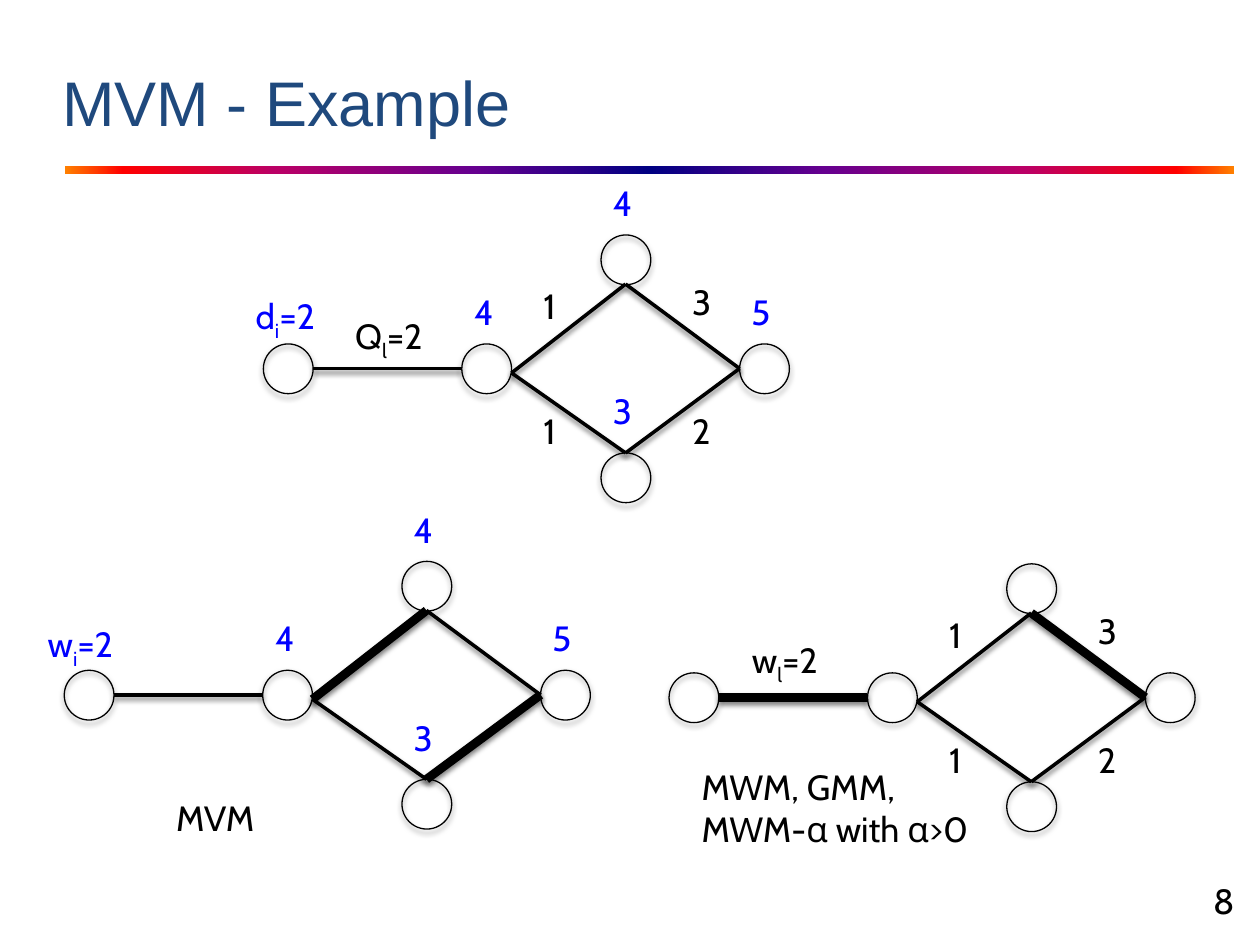
"""Build the MVM example slide: one weighted graph and its two matchings."""
from dataclasses import dataclass, field

import lxml.etree
import pptx
import pptx.dml.color
import pptx.enum.shapes
import pptx.enum.text
import pptx.oxml.ns
import pptx.util

RGBColor = pptx.dml.color.RGBColor
BLACK = RGBColor(0x00, 0x00, 0x00)
BLUE = RGBColor(0x00, 0x00, 0xFF)
NAVY = RGBColor(0x1F, 0x49, 0x7D)
WHITE = RGBColor(0xFF, 0xFF, 0xFF)
HALF_RAINBOW = [
    (0, RGBColor(0xFF, 0x82, 0x00)),
    (5, RGBColor(0xFF, 0x00, 0x00)),
    (18, RGBColor(0xBA, 0x00, 0x66)),
    (35, RGBColor(0x66, 0x00, 0x8F)),
]
RAINBOW = (HALF_RAINBOW + [(50, RGBColor(0x00, 0x00, 0x82))]
           + [(100 - stop, color) for stop, color in reversed(HALF_RAINBOW)])

COLUMNS, ROWS = 100, 75
WIDTH, HEIGHT = pptx.util.Inches(10), pptx.util.Inches(7.5)
NODE = 3.95
THIN, THICK = 2, 5
LABEL_WIDTH, LABEL_HEIGHT = 3.1, 4.4

NODES = {"leaf": (0, 0), "hub": (15.75, 0), "top": (26.8, -8.65),
         "bottom": (26.8, 8.65), "right": (37.8, 0)}
PORTS = {"leaf": (NODE, 1.95), "hub": (15.75, 1.95), "fork": (19.7, 2.3),
         "top": (28.75, -4.75), "bottom": (28.75, 8.65), "right": (37.8, 1.95)}
EDGES = [("leaf", "hub"), ("fork", "top"), ("fork", "bottom"),
         ("bottom", "right"), ("top", "right")]


@dataclass
class Label:
    """A text placed relative to its graph's leaf node."""
    text: str
    col: float
    row: float
    color: RGBColor = BLACK
    width: float = LABEL_WIDTH


@dataclass
class Graph:
    """A drawing of the example graph with its matched edges and labels."""
    col: float
    row: float
    labels: list[Label]
    matched: set[tuple[str, str]] = field(default_factory=set)


EDGE_WEIGHTS = [Label("3", 33.05, -5.5), Label("2", 33.05, 4.7),
                Label("1", 21.25, 4.7), Label("1", 21.25, -5.2)]
NODE_WEIGHTS = [Label("4", 26.75, -13.35, BLUE), Label("5", 37.75, -4.75, BLUE),
                Label("3", 26.75, 3.15, BLUE), Label("4", 15.75, -4.75, BLUE)]

GRAPHS = [
    Graph(20.9, 27.3, EDGE_WEIGHTS + NODE_WEIGHTS + [
        Label("Q_l=2", 6.3, -2.8, BLACK, 8.7),
        Label("d_i=2", -1.6, -4.4, BLUE, 12.6)]),
    Graph(5.1, 53.2, NODE_WEIGHTS + [Label("w_i=2", -2.3, -4.3, BLUE, 8.7)],
          {("fork", "top"), ("bottom", "right")}),
    Graph(53.1, 53.4, EDGE_WEIGHTS + [Label("w_l=2", 5.6, -3.2, BLACK, 8.7)],
          {("leaf", "hub"), ("top", "right")}),
]


def x(cols: float) -> int:
    """Convert grid columns to a length."""
    return round(WIDTH * cols / COLUMNS)


def y(rows: float) -> int:
    """Convert grid rows to a length."""
    return round(HEIGHT * rows / ROWS)


def add_text(slide, text: str, col: float, row: float, width: float, height: float, *,
             size: float = 20, font: str = "Cabin", color: RGBColor = BLACK,
             wrap: bool = True, grow: bool = True,
             inset: tuple[float, float] = (1, 0.5)) -> None:
    """Add a text box; the letter after an underscore becomes a subscript."""
    tf = slide.shapes.add_textbox(x(col), y(row), x(width), y(height)).text_frame
    tf.word_wrap = wrap
    auto = pptx.enum.text.MSO_AUTO_SIZE
    tf.auto_size = auto.SHAPE_TO_FIT_TEXT if grow else auto.NONE
    tf.margin_left, tf.margin_top = x(inset[0]), y(inset[1])
    p = tf.paragraphs[0]
    head, _, tail = text.partition("_")
    for part, baseline in ((head, 0), (tail[:1], -25000), (tail[1:], 0)):
        if not part:
            continue
        r = p.add_run()
        r.text = part
        r.font.size = pptx.util.Pt(size)
        r.font.name = font
        r.font.color.rgb = color
        if baseline:
            r._r.get_or_add_rPr().set("baseline", str(baseline))


def add_child(parent, tag: str, **attributes: str):
    """Append a DrawingML element and return it."""
    return lxml.etree.SubElement(parent, pptx.oxml.ns.qn(tag), **attributes)


def add_color(parent, color: RGBColor):
    """Append a colour element and return it."""
    return add_child(parent, "a:srgbClr", val=str(color))


def style_outline(s, width: float) -> None:
    """Give a shape or connector a black line and a soft shadow below."""
    s.line.color.rgb = BLACK
    s.line.width = pptx.util.Pt(width)
    effects = add_child(s._element.spPr, "a:effectLst")
    shadow = add_child(effects, "a:outerShdw", blurRad=str(pptx.util.Pt(3)),
                       dist=str(pptx.util.Pt(2)), dir="5400000", rotWithShape="0")
    add_child(add_color(shadow, BLACK), "a:alpha", val="50000")


def add_rainbow_bar(slide) -> None:
    """Add the gradient rule under the title."""
    s = slide.shapes.add_shape(pptx.enum.shapes.MSO_SHAPE.RECTANGLE,
                               x(5.1), y(13.1), x(92.9), y(0.8))
    s.shadow.inherit = False
    s.fill.gradient()
    s.fill.gradient_angle = 0
    stops = s._element.spPr.find(".//" + pptx.oxml.ns.qn("a:gsLst"))
    for old in list(stops):
        stops.remove(old)
    for stop, color in RAINBOW:
        add_color(add_child(stops, "a:gs", pos=str(stop * 1000)), color)
    s.line.color.rgb = WHITE
    s.line.width = pptx.util.Pt(0.75)


def add_graph(slide, graph: Graph) -> None:
    """Draw the nodes, edges and labels of one graph."""
    for col, row in NODES.values():
        s = slide.shapes.add_shape(pptx.enum.shapes.MSO_SHAPE.OVAL, x(graph.col + col),
                                   y(graph.row + row), x(NODE), y(NODE))
        s.fill.background()
        style_outline(s, 0.75)
    for edge in EDGES:
        (col1, row1), (col2, row2) = (PORTS[end] for end in edge)
        s = slide.shapes.add_connector(
            pptx.enum.shapes.MSO_CONNECTOR.STRAIGHT,
            x(graph.col + col1), y(graph.row + row1),
            x(graph.col + col2), y(graph.row + row2))
        style_outline(s, THICK if edge in graph.matched else THIN)
    for label in graph.labels:
        add_text(slide, label.text, graph.col + label.col, graph.row + label.row,
                 label.width, LABEL_HEIGHT, color=label.color)


def main() -> None:
    """Build and save the slide."""
    prs = pptx.Presentation()
    prs.slide_width, prs.slide_height = WIDTH, HEIGHT
    slide = prs.slides.add_slide(prs.slide_layouts[6])
    add_rainbow_bar(slide)
    add_text(slide, "MVM - Example", 4.3, 3.9, 85.2, 9.2, size=36, font="Arial",
             color=NAVY, grow=False, inset=(0.65, 1.1))
    add_text(slide, "8", 95.3, 69.3, 3.5, LABEL_HEIGHT, wrap=False)
    for graph in GRAPHS:
        add_graph(slide, graph)
    add_text(slide, "MVM", 13, 62.7, 8.7, LABEL_HEIGHT)
    add_text(slide, "MWM, GMM, MWM-α with α>0", 54.7, 60.3, 25.2, 7.7)
    prs.save("out.pptx")


if __name__ == "__main__":
    main()
